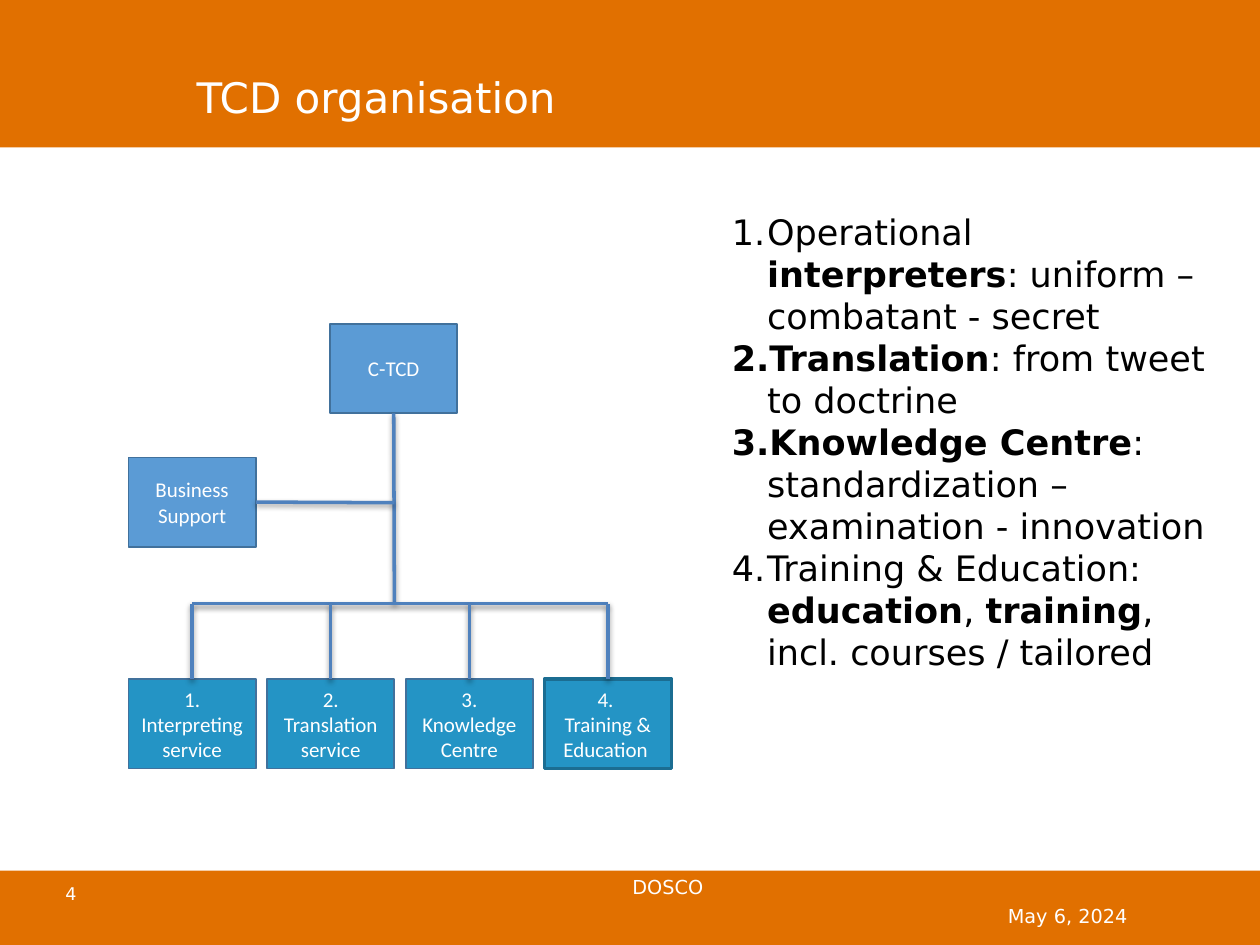
from dataclasses import dataclass

from lxml.etree import SubElement
from pptx import Presentation
from pptx.dml.color import RGBColor
from pptx.enum.shapes import MSO_CONNECTOR, MSO_SHAPE
from pptx.enum.text import MSO_ANCHOR, MSO_AUTO_SIZE, PP_ALIGN
from pptx.oxml.ns import qn
from pptx.util import Inches, Pt

ORANGE, WHITE, BLACK = "E17000", "FFFFFF", "000000"
OFFICE_BLUE, SERVICE_BLUE, BOX_EDGE, LINE_BLUE = "5B9BD5", "2494C5", "41719C", "4F81BD"
BODY_FONT, CHART_FONT = "DejaVu Sans", "Calibri"
UNIT_W, UNIT_H = 1.01, 0.71
SERVICE_LEFT, SERVICE_TOP, SERVICE_PITCH = 1.02, 5.39, 1.1
TRUNK_X, BUS_Y = 3.13, 4.79
TOP, BOTTOM, RIGHT = 0, 2, 3


@dataclass
class Unit:
    lines: list[str]
    left: float
    top: float
    fill: str = SERVICE_BLUE
    edge: str = BOX_EDGE
    edge_width: float = 1


@dataclass
class Label:
    text: str
    left: float
    top: float
    width: float
    height: float
    size: float
    anchor: MSO_ANCHOR = MSO_ANCHOR.TOP


def color(hex_code: str) -> RGBColor:
    return RGBColor.from_string(hex_code)


def add_run(paragraph, text: str, size: float, hex_code: str,
            font: str = BODY_FONT, bold: bool = False) -> None:
    run = paragraph.add_run()
    run.text = text
    run.font.size, run.font.name, run.font.bold = Pt(size), font, bold
    run.font.color.rgb = color(hex_code)


def add_rectangle(slide, left: float, top: float, width: float, height: float, fill: str):
    box = slide.shapes.add_shape(MSO_SHAPE.RECTANGLE, Inches(left), Inches(top),
                                 Inches(width), Inches(height))
    box.shadow.inherit = False
    box.fill.solid()
    box.fill.fore_color.rgb = color(fill)
    box.line.fill.background()
    return box


def add_text_frame(slide, left: float, top: float, width: float, height: float):
    frame = slide.shapes.add_textbox(Inches(left), Inches(top),
                                     Inches(width), Inches(height)).text_frame
    frame.word_wrap = True
    return frame


def add_label(slide, label: Label) -> None:
    frame = add_text_frame(slide, label.left, label.top, label.width, label.height)
    frame.vertical_anchor = label.anchor
    add_run(frame.paragraphs[0], label.text, label.size, WHITE)


def add_title(slide, text: str) -> None:
    title = slide.shapes.title
    title.left, title.top = Inches(1.46), Inches(0.52)
    title.width, title.height = Inches(3.43), Inches(0.5)
    title.element.getparent().append(title.element)  # in front of the header band
    frame = title.text_frame
    frame.vertical_anchor = MSO_ANCHOR.TOP
    frame.auto_size = MSO_AUTO_SIZE.SHAPE_TO_FIT_TEXT
    frame.paragraphs[0].alignment = PP_ALIGN.LEFT
    add_run(frame.paragraphs[0], text, 24, WHITE)


def add_unit(slide, unit: Unit):
    box = add_rectangle(slide, unit.left, unit.top, UNIT_W, UNIT_H, unit.fill)
    box.line.color.rgb = color(unit.edge)
    box.line.width = Pt(unit.edge_width)
    frame = box.text_frame
    frame.word_wrap = True
    frame.vertical_anchor = MSO_ANCHOR.MIDDLE
    frame.margin_left = frame.margin_right = Inches(0.07)
    frame.margin_top = frame.margin_bottom = Inches(0.04)
    for i, line in enumerate(unit.lines):
        paragraph = frame.add_paragraph() if i else frame.paragraphs[0]
        paragraph.alignment = PP_ALIGN.CENTER
        add_run(paragraph, line, 12, WHITE, CHART_FONT)
    return box


def add_line(slide, x1: float, y1: float, x2: float, y2: float):
    """Draw a chart line with a soft shadow below it."""
    line = slide.shapes.add_connector(MSO_CONNECTOR.STRAIGHT, Inches(x1), Inches(y1),
                                      Inches(x2), Inches(y2))
    line.line.color.rgb = color(LINE_BLUE)
    line.line.width = Pt(2)
    effects = SubElement(line.element.spPr, qn("a:effectLst"))
    shadow = SubElement(effects, qn("a:outerShdw"), blurRad=str(Pt(3.1)),
                        dist=str(Pt(1.6)), dir="5400000", rotWithShape="0")
    shade = SubElement(shadow, qn("a:srgbClr"), val=BLACK)
    SubElement(shade, qn("a:alpha"), val="38000")
    return line


def add_org_chart(slide) -> None:
    head = add_unit(slide, Unit(["C-TCD"], 2.62, 2.57, OFFICE_BLUE))
    support = add_unit(slide, Unit(["Business", "Support"], 1.02, 3.63, OFFICE_BLUE))
    service_lines = [["1. Interpreting service"], ["2. Translation service"],
                     ["3. Knowledge Centre"], ["4. ", "Training &", "Education "]]
    services = [Unit(lines, SERVICE_LEFT + i * SERVICE_PITCH, SERVICE_TOP)
                for i, lines in enumerate(service_lines)]
    services[-1].edge, services[-1].edge_width = "1B6D92", 2
    boxes = [add_unit(slide, service) for service in services]
    centers = [service.left + UNIT_W / 2 for service in services]

    trunk = add_line(slide, TRUNK_X, 3.28, TRUNK_X, BUS_Y)
    trunk.begin_connect(head, BOTTOM)
    add_line(slide, centers[0], BUS_Y, centers[-1], BUS_Y)
    for box, center in zip(boxes, centers):
        drop = add_line(slide, center, SERVICE_TOP, center, BUS_Y)
        drop.begin_connect(box, TOP)
    branch = add_line(slide, 2.03, 3.99, TRUNK_X, 3.99)
    branch.begin_connect(support, RIGHT)


def add_task_list(slide, tasks: list[list[tuple[str, bool]]]) -> None:
    """Write a numbered list; each task is a list of (text, bold) runs."""
    frame = add_text_frame(slide, 5.71, 1.62, 4.02, 3.8)
    frame.auto_size = MSO_AUTO_SIZE.SHAPE_TO_FIT_TEXT
    for i, task in enumerate(tasks):
        paragraph = frame.add_paragraph() if i else frame.paragraphs[0]
        properties = paragraph._p.get_or_add_pPr()
        properties.set("marL", str(Inches(0.28)))
        properties.set("indent", str(Inches(-0.28)))
        SubElement(properties, qn("a:buFont"), typeface="+mj-lt")
        SubElement(properties, qn("a:buAutoNum"), type="arabicPeriod")
        for text, bold in task:
            add_run(paragraph, text, 20, BLACK, bold=bold)


def main() -> None:
    presentation = Presentation()
    presentation.slide_width, presentation.slide_height = Inches(10), Inches(7.5)
    slide = presentation.slides.add_slide(presentation.slide_layouts[5])

    add_rectangle(slide, 0, 6.91, 10, 0.59, ORANGE)
    add_rectangle(slide, 0, 0, 10, 1.17, ORANGE)
    for label in (Label("DOSCO", 4.92, 6.9, 4.55, 0.31, 11),
                  Label("4", 0.42, 6.96, 0.78, 0.4, 10),
                  Label("May 6, 2024", 7.9, 7.07, 1.82, 0.4, 11, MSO_ANCHOR.MIDDLE)):
        add_label(slide, label)
    add_title(slide, "TCD organisation")
    add_org_chart(slide)
    add_task_list(slide, [
        [("Operational ", False), ("interpreters", True),
         (": uniform – combatant - secret", False)],
        [("Translation", True), (": from tweet to doctrine", False)],
        [("Knowledge Centre", True),
         (": standardization – examination - innovation", False)],
        [("Training & Education: ", False), ("education", True), (", ", False),
         ("training", True), (", incl. courses / tailored", False)],
    ])
    presentation.save("out.pptx")


if __name__ == "__main__":
    main()
